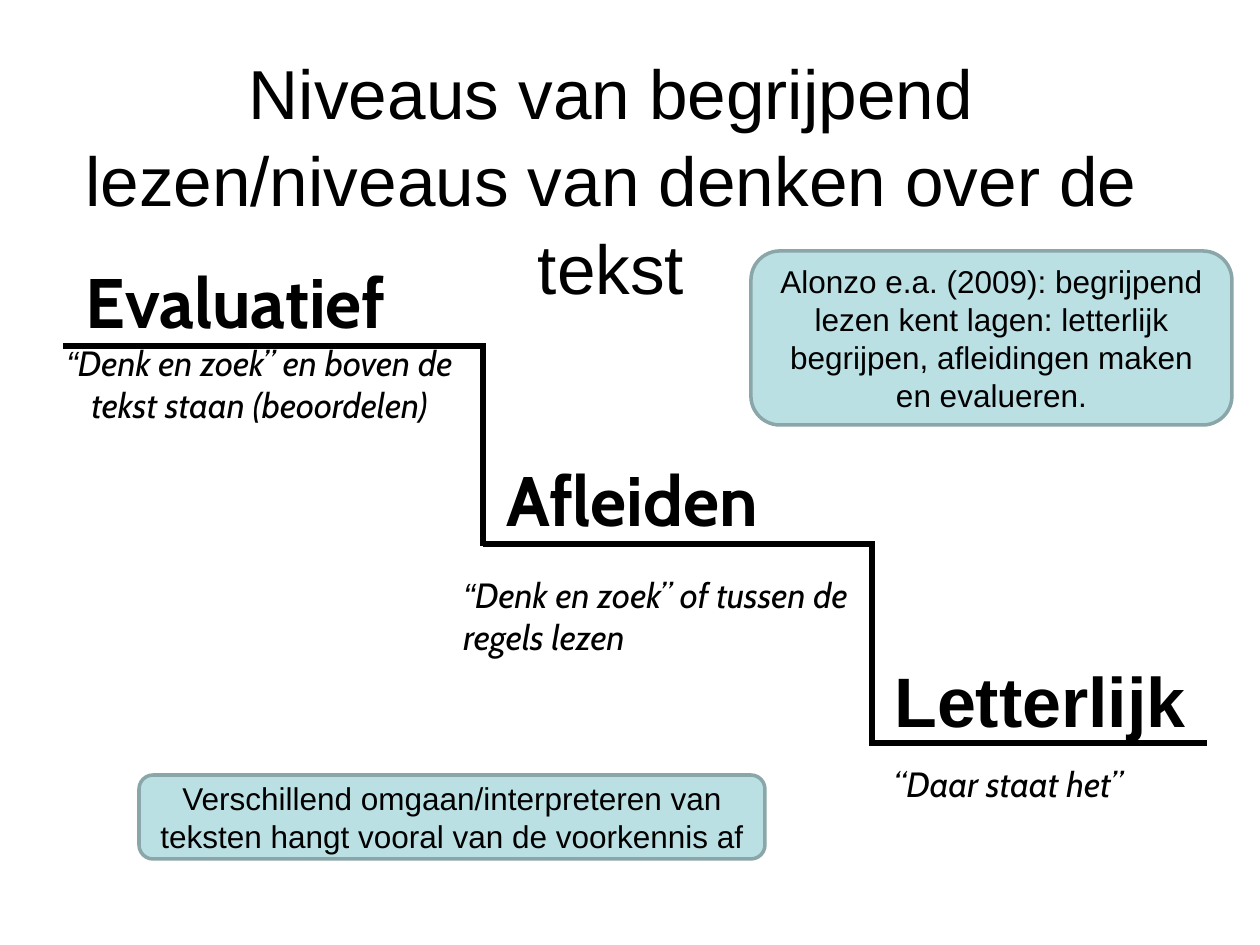
"""Build a slide with a staircase of reading comprehension levels."""
from lxml.etree import SubElement
from pptx import Presentation
from pptx.dml.color import RGBColor
from pptx.enum.shapes import MSO_CONNECTOR, MSO_SHAPE
from pptx.enum.text import MSO_ANCHOR, MSO_AUTO_SIZE, PP_ALIGN
from pptx.oxml.ns import qn
from pptx.util import Emu, Pt

theme = {
    "ink": RGBColor.from_string("000000"),
    "fill": RGBColor.from_string("BBE0E3"),
    "edge": RGBColor.from_string("8AA6A8"),
    "title": {"name": "Arial", "size": Pt(39.6)},
    "level": {"name": "Cabin", "size": Pt(40), "bold": True},
    "hint": {"name": "Cabin", "size": Pt(20), "italic": True},
    "note": {"name": "Arial", "size": Pt(18)},
}


def px(*nums):
    return [Emu(round(n * 914400 / 126)) for n in nums]


def write(shape, runs, style, align, anchor):
    frame = shape.text_frame
    form = {"word_wrap": True, "auto_size": MSO_AUTO_SIZE.NONE,
            "vertical_anchor": anchor}
    for key, val in form.items():
        setattr(frame, key, val)
    para = frame.paragraphs[0]
    para.alignment = align
    for text, face in runs:
        run = para.add_run()
        run.text = text
        for key, val in {**theme[style], "name": face}.items():
            setattr(run.font, key, val)
        run.font.color.rgb = theme["ink"]
    return para


deck = Presentation()
deck.slide_width, deck.slide_height = px(1260, 945)
slide = deck.slides.add_slide(deck.slide_layouts[5])
shapes = slide.shapes
left, mid = PP_ALIGN.LEFT, PP_ALIGN.CENTER

title = shapes.title
title.left, title.top, title.width, title.height = px(44, 135, 1134, 84)
head = write(title, [("Niveaus van begrijpend lezen/niveaus van denken over de tekst",
                      "Arial")], "title", mid, MSO_ANCHOR.MIDDLE)
head.line_spacing = 1.05

steps = [
    (483, 346, 483, 546),
    (63, 346, 486, 346),
    (483, 544, 875, 544),
    (872, 743, 1207, 743),
    (872, 546, 872, 746),
]
for step in steps:
    line = shapes.add_connector(MSO_CONNECTOR.STRAIGHT, *px(*step))
    line.line.color.rgb = theme["ink"]
    line.line.width = Pt(3)
    SubElement(line._element.spPr, qn("a:effectLst"))

texts = [
    ((73, 252, 378, 97), [("Evaluatief", "Cabin")], "level", left),
    ((494, 450, 473, 97), [("Afleiden", "Cabin")], "level", left),
    ((882, 651, 353, 97), [("Letterlijk", "Arial")], "level", left),
    ((819, 756, 378, 54), [("“Daar staat het”", "Cabin")], "hint", mid),
    ((451, 567, 431, 97), [("“", "Arial"),
     ("Denk en zoek” of tussen de regels lezen", "Cabin")], "hint", left),
    ((34, 335, 451, 217), [("“", "Arial"),
     ("Denk en zoek” en boven de tekst staan (beoordelen)", "Cabin")], "hint", mid),
]
for area, runs, style, align in texts:
    box = shapes.add_textbox(*px(*area))
    write(box, runs, style, align, MSO_ANCHOR.TOP)

notes = [
    ((139, 775, 626, 84), "Verschillend omgaan/interpreteren van teksten "
     "hangt vooral van de voorkennis af"),
    ((751, 251, 481, 174), "Alonzo e.a. (2009): begrijpend lezen kent lagen: "
     "letterlijk begrijpen, afleidingen maken en evalueren."),
]
for area, text in notes:
    card = shapes.add_shape(MSO_SHAPE.ROUNDED_RECTANGLE, *px(*area))
    card.shadow.inherit = False
    card.fill.solid()
    card.fill.fore_color.rgb = theme["fill"]
    card.line.color.rgb = theme["edge"]
    card.line.width = Pt(2)
    write(card, [(text, "Arial")], "note", mid, MSO_ANCHOR.MIDDLE)

deck.save("out.pptx")
